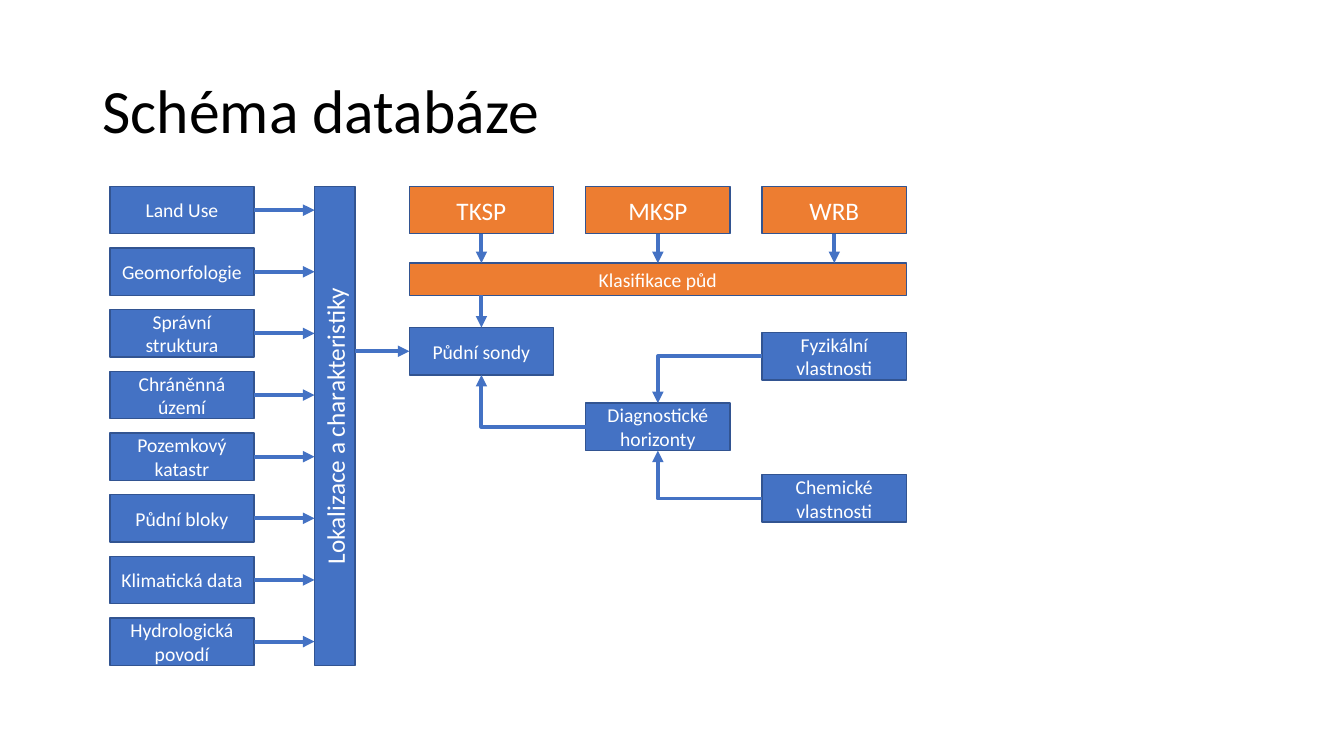
from pptx import Presentation
from pptx.dml.color import RGBColor
from pptx.enum.shapes import MSO_CONNECTOR, MSO_SHAPE
from pptx.enum.text import MSO_ANCHOR, PP_ALIGN
from pptx.oxml.ns import qn
from pptx.util import Pt
from lxml import etree

RECT = MSO_SHAPE.RECTANGLE
LINE, BENT = MSO_CONNECTOR.STRAIGHT, MSO_CONNECTOR.ELBOW
MIDDLE, CENTER = MSO_ANCHOR.MIDDLE, PP_ALIGN.CENTER
TOP, LEFT, BASE, RIGHT = range(4)
UNIT = 9144  # EMU per px, 100 px to the inch


class Theme:
    font = "Calibri"
    blue = RGBColor(0x44, 0x72, 0xC4)
    orange = RGBColor(0xED, 0x7D, 0x31)
    edge = RGBColor(0x32, 0x54, 0x91)
    white = RGBColor(0xFF, 0xFF, 0xFF)
    black = RGBColor(0, 0, 0)
    title, large, small = Pt(44), Pt(18), Pt(14)
    thin, thick = Pt(1), Pt(2.75)


WIDE, HIGH = 143, 47  # size of a usual box
SOURCES = ["Land Use", "Geomorfologie", "Správní struktura", "Chráněnná území",
           "Pozemkový katastr", "Půdní bloky", "Klimatická data",
           "Hydrologická povodí"]
SYSTEMS = ["TKSP", "MKSP", "WRB"]


def px(n):
    return round(n * UNIT)


def apply(item, form):
    for key, value in form.items():
        setattr(item, key, value)


def write(shape, text, size, color, **para):
    frame = shape.text_frame
    apply(frame, {"word_wrap": True, "vertical_anchor": MIDDLE})
    line = frame.paragraphs[0]
    apply(line, para)
    run = line.add_run()
    apply(run, {"text": text})
    apply(run.font, {"name": Theme.font, "size": size})
    run.font.color.rgb = color


def add_box(slide, area, text, fill=Theme.blue, size=Theme.small):
    box = slide.shapes.add_shape(RECT, *map(px, area))
    box.shadow.inherit = False
    box.fill.solid()
    box.fill.fore_color.rgb = fill
    box.line.color.rgb = Theme.edge
    box.line.width = Theme.thin
    write(box, text, size, Theme.white, alignment=CENTER)
    return box


def point(box, side):
    """Middle of one side of a box, in EMU."""
    x = {LEFT: 0, RIGHT: box.width}.get(side, box.width // 2)
    y = {TOP: 0, BASE: box.height}.get(side, box.height // 2)
    return box.left + x, box.top + y


def add_arrow(slide, start, end, kind=LINE):
    """Each end is a (box, side) pair to join, or a free (x, y) in EMU."""
    ends = [start, end]
    joins = [not isinstance(e[0], int) for e in ends]
    spots = [point(*e) if join else e for e, join in zip(ends, joins)]
    arrow = slide.shapes.add_connector(kind, *spots[0], *spots[1])
    for e, join, fix in zip(ends, joins, (arrow.begin_connect, arrow.end_connect)):
        if join:
            fix(*e)
    arrow.line.color.rgb = Theme.blue
    arrow.line.width = Theme.thick
    props = arrow._element.spPr
    if kind == BENT:  # a single corner
        props.find(qn("a:prstGeom")).set("prst", "bentConnector2")
    etree.SubElement(props.find(qn("a:ln")), qn("a:tailEnd"), type="triangle")
    etree.SubElement(props, qn("a:effectLst"))


def add_title(slide, area, text):
    box = slide.shapes.add_textbox(*map(px, area))
    write(box, text, Theme.title, Theme.black, line_spacing=0.9)


def add_sources(slide, area):
    """Column of data sources, all leading to one tall bar."""
    left, top, width, height = area
    bar = add_box(slide, (left + width - 40, top, 40, height),
                  "Lokalizace a charakteristiky", size=Theme.large)
    bar.text_frame._txBody.bodyPr.set("vert", "vert270")
    step = (height - HIGH) / (len(SOURCES) - 1)
    for i, name in enumerate(SOURCES):
        box = add_box(slide, (left, top + i * step, WIDE, HIGH), name)
        add_arrow(slide, (box, RIGHT), (bar.left, point(box, RIGHT)[1]))
    return bar


def add_systems(slide, area):
    """Row of soil systems above the band they feed."""
    left, top, width, height = area
    band = add_box(slide, (left, top + height - 32, width, 32),
                   "Klasifikace půd", Theme.orange)
    step = (width - WIDE) / (len(SYSTEMS) - 1)
    for i, name in enumerate(SYSTEMS):
        box = add_box(slide, (left + i * step, top, WIDE, HIGH), name,
                      Theme.orange, Theme.large)
        x = point(box, BASE)[0]
        mid = x == point(band, TOP)[0]
        add_arrow(slide, (box, BASE), (band, TOP) if mid else (x, band.top))
    return band


def add_probes(slide, area, bar, band):
    """Soil probes with the horizons and properties behind them."""
    left, top, width, height = area
    far = left + width - WIDE
    probe = add_box(slide, (left, top, WIDE, HIGH), "Půdní sondy")
    layer = add_box(slide, ((left + far) / 2, top + 75, WIDE, HIGH),
                    "Diagnostické horizonty")
    phys = add_box(slide, (far, top + 5, WIDE, HIGH), "Fyzikální vlastnosti")
    chem = add_box(slide, (far, top + height - HIGH, WIDE, HIGH),
                   "Chemické vlastnosti")
    add_arrow(slide, (bar.left + bar.width, point(probe, LEFT)[1]), (probe, LEFT))
    add_arrow(slide, (point(probe, TOP)[0], band.top + band.height), (probe, TOP))
    for box, goal, side in [(layer, probe, BASE), (phys, layer, TOP),
                            (chem, layer, BASE)]:
        add_arrow(slide, (box, LEFT), (goal, side), BENT)


def main():
    deck = Presentation()
    apply(deck, {"slide_width": px(1333), "slide_height": px(750)})
    slide = deck.slides.add_slide(deck.slide_layouts[6])
    add_title(slide, (92, 40, 1150, 145), "Schéma databáze")
    bar = add_sources(slide, (109, 185, 243, 475))
    band = add_systems(slide, (406, 185, 493, 108))
    add_probes(slide, (406, 325, 493, 193), bar, band)
    deck.save("out.pptx")


if __name__ == "__main__":
    main()
